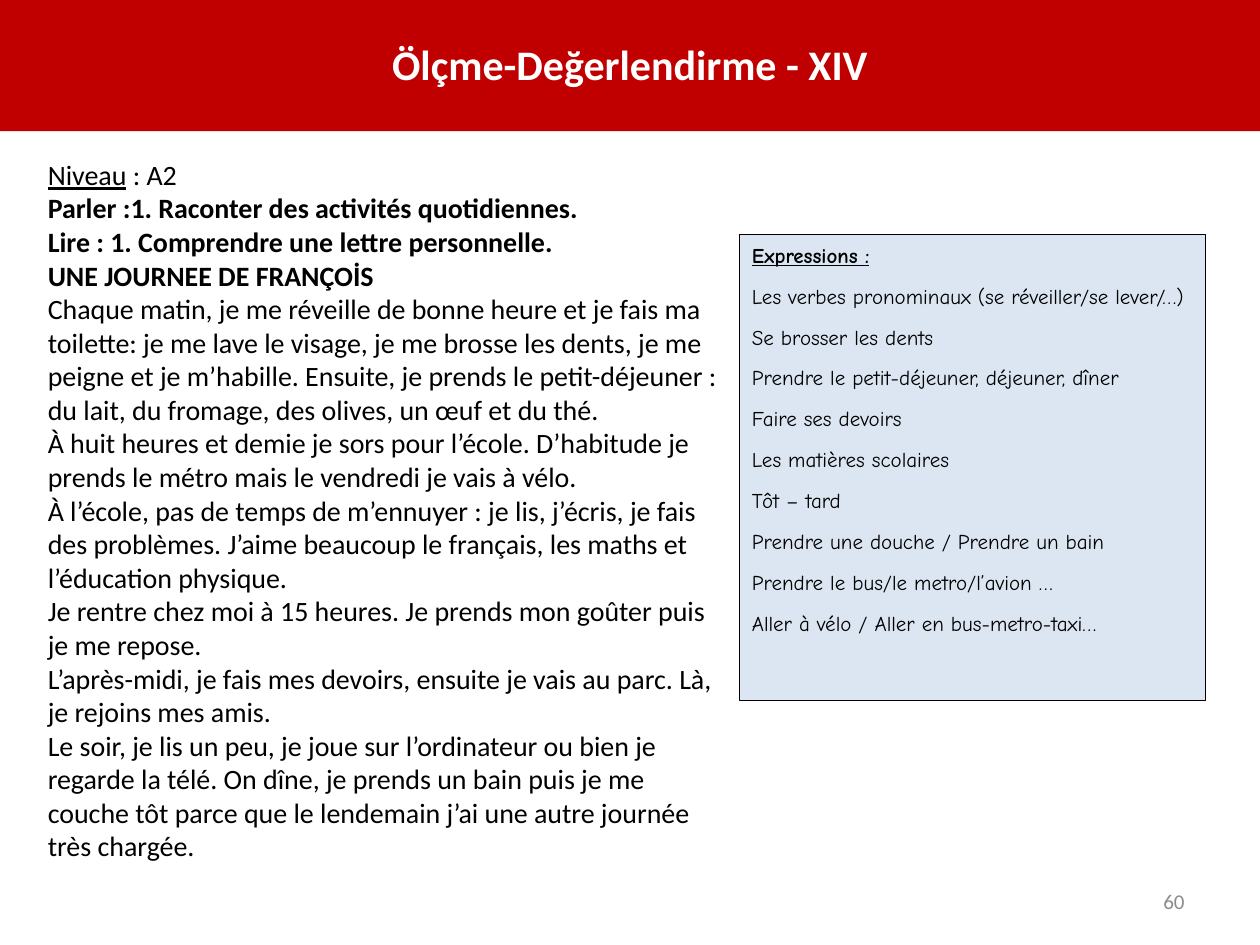
import pptx
import pptx.util
import pptx.dml.color
import pptx.enum.shapes
import pptx.enum.text

Pt = pptx.util.Pt
RGBColor = pptx.dml.color.RGBColor
ALIGN = pptx.enum.text.PP_ALIGN
ANCHOR = pptx.enum.text.MSO_ANCHOR

RED = RGBColor(0xC0, 0x00, 0x00)
PALE_BLUE = RGBColor(0xDC, 0xE6, 0xF2)
BLACK = RGBColor(0, 0, 0)
WHITE = RGBColor(0xFF, 0xFF, 0xFF)
GREY = RGBColor(0x8C, 0x8C, 0x8C)

# Content: each paragraph is a list of (text, style) runs, b = bold, u = underlined
TITLE = [[("Ölçme-Değerlendirme - XIV", "b")]]
PAGE_NUMBER = [[("60", "")]]
HEADINGS = [
    "Parler : 1. Raconter des activités quotidiennes.".replace(": 1", ":1"),
    "Lire : 1. Comprendre une lettre personnelle.",
    "UNE JOURNEE DE FRANÇOİS",
]
STORY = [
    "Chaque matin, je me réveille de bonne heure et je fais ma toilette: je me lave le visage, "
    "je me brosse les dents, je me peigne et je m’habille. Ensuite, je prends le "
    "petit-déjeuner : du lait, du fromage, des olives, un œuf et du thé.",
    "À huit heures et demie je sors pour l’école. D’habitude je prends le métro mais le "
    "vendredi je vais à vélo.",
    "À l’école, pas de temps de m’ennuyer : je lis, j’écris, je fais des problèmes. "
    "J’aime beaucoup le français, les maths et l’éducation physique.",
    "Je rentre chez moi à 15 heures. Je prends mon goûter puis je me repose.",
    "L’après-midi, je fais mes devoirs, ensuite je vais au parc. Là, je rejoins mes amis.",
    "Le soir, je lis un peu, je joue sur l’ordinateur ou bien je regarde la télé. On dîne, "
    "je prends un bain puis je me couche tôt parce que le lendemain j’ai une autre journée "
    "très chargée.",
]
EXPRESSIONS = [
    "Les verbes pronominaux (se réveiller/se lever/…)",
    "Se brosser les dents",
    "Prendre le petit-déjeuner, déjeuner, dîner",
    "Faire ses devoirs",
    "Les matières scolaires",
    "Tôt – tard",
    "Prendre une douche / Prendre un bain",
    "Prendre le bus/le metro/l’avion …",
    "Aller à vélo / Aller en bus-metro-taxi…",
]
LESSON = ([[("Niveau", "u"), (" : A2", "")]]
          + [[(heading, "b")] for heading in HEADINGS]
          + [[(passage, "")] for passage in STORY])
VOCABULARY = [[("Expressions :", "bu")]] + [[(phrase, "")] for phrase in EXPRESSIONS]


def write(shape, paragraphs, size, color, font="Calibri", align=ALIGN.LEFT,
          anchor=ANCHOR.TOP, line_spacing=None, space_after=None):
    frame = shape.text_frame
    frame.word_wrap = True
    frame.vertical_anchor = anchor
    for index, runs in enumerate(paragraphs):
        paragraph = frame.add_paragraph() if index else frame.paragraphs[0]
        paragraph.alignment = align
        paragraph.line_spacing = line_spacing
        paragraph.space_after = space_after
        for text, style in runs:
            run = paragraph.add_run()
            run.text = text
            run.font.name = font
            run.font.size = Pt(size)
            run.font.color.rgb = color
            run.font.bold = "b" in style
            run.font.underline = "u" in style


def add_panel(slide, left, top, width, height, fill):
    panel = slide.shapes.add_shape(pptx.enum.shapes.MSO_SHAPE.RECTANGLE,
                                   Pt(left), Pt(top), Pt(width), Pt(height))
    panel.shadow.inherit = False
    panel.fill.solid()
    panel.fill.fore_color.rgb = fill
    panel.line.fill.background()
    return panel


def add_text(slide, left, top, width, height):
    return slide.shapes.add_textbox(Pt(left), Pt(top), Pt(width), Pt(height))


def main():
    deck = pptx.Presentation()
    deck.slide_width, deck.slide_height = Pt(720), Pt(540)
    slide = deck.slides.add_slide(deck.slide_layouts[6])

    # Page number
    page_number = add_text(slide, 516, 500.4, 168, 28.8)
    write(page_number, PAGE_NUMBER, 12, GREY, align=ALIGN.RIGHT, anchor=ANCHOR.MIDDLE)

    # Title band
    title_band = add_panel(slide, 0, -2, 720, 77, RED)
    write(title_band, TITLE, 24, WHITE, align=ALIGN.CENTER, anchor=ANCHOR.MIDDLE)

    # Reading passage
    lesson = add_text(slide, 20.2, 86.4, 402.5, 414.7)
    write(lesson, LESSON, 16, BLACK)
    lesson.text_frame.auto_size = pptx.enum.text.MSO_AUTO_SIZE.SHAPE_TO_FIT_TEXT

    # Vocabulary panel
    vocabulary = add_panel(slide, 422.6, 133.9, 266.4, 266.4, PALE_BLUE)
    vocabulary.line.color.rgb = BLACK
    vocabulary.line.width = Pt(0.5)
    write(vocabulary, VOCABULARY, 12, BLACK, font="Comic Neue",
          line_spacing=1.07, space_after=Pt(8))

    deck.save("out.pptx")


if __name__ == "__main__":
    main()
